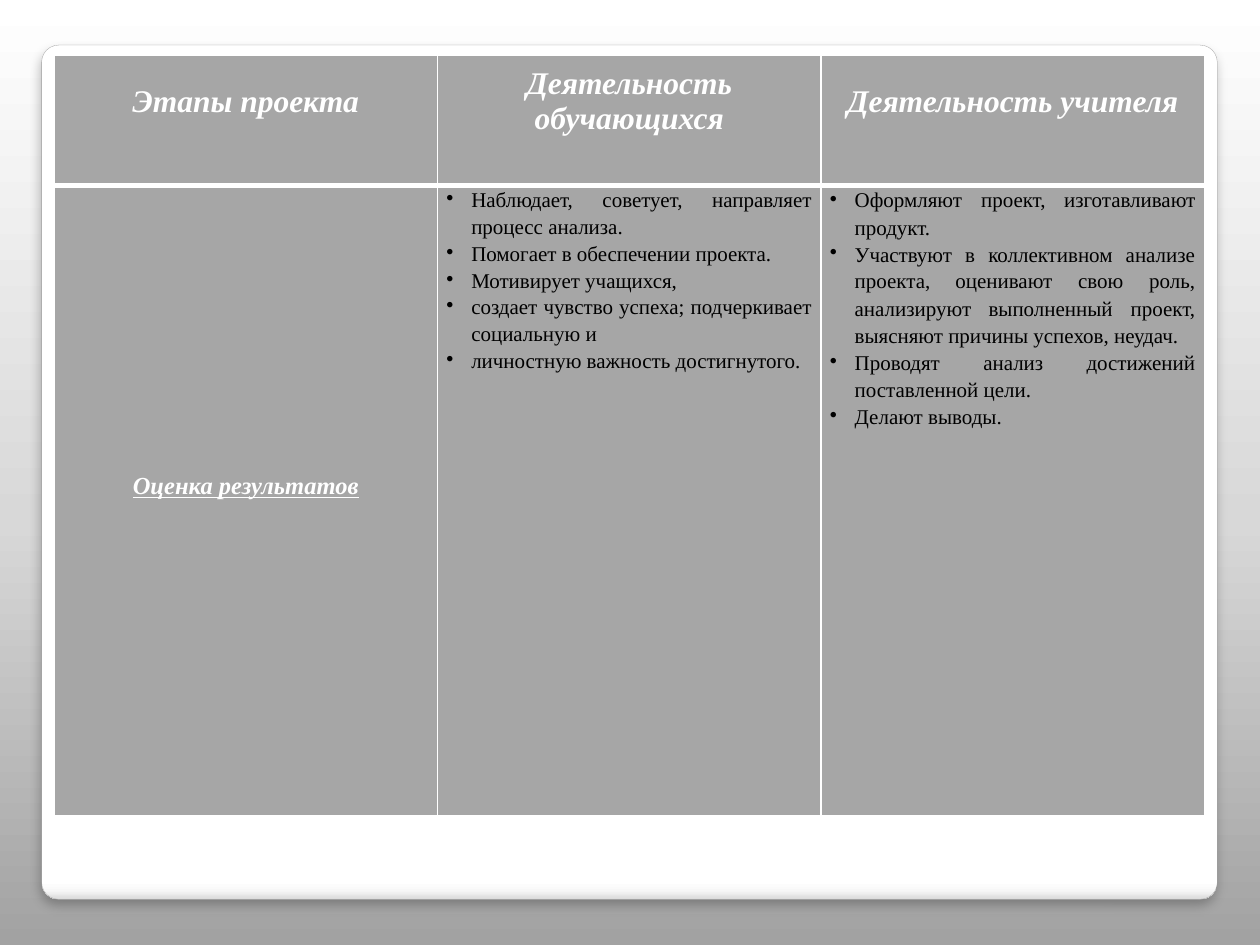
from lxml import etree
from pptx import Presentation
from pptx.dml.color import RGBColor
from pptx.enum.shapes import MSO_SHAPE
from pptx.enum.text import MSO_ANCHOR, PP_ALIGN
from pptx.oxml.ns import qn
from pptx.util import Cm, Pt

ROUNDED = MSO_SHAPE.ROUNDED_RECTANGLE
MIDDLE, TOP = MSO_ANCHOR.MIDDLE, MSO_ANCHOR.TOP
CENTER, JUSTIFY = PP_ALIGN.CENTER, PP_ALIGN.JUSTIFY

SERIF, SANS = "Times New Roman", "Calibri"
WHITE, BLACK, GREY = "FFFFFF", "000000", "A6A6A6"
GAP = " "

HEADERS = ["Этапы проекта", "Деятельность обучающихся", "Деятельность учителя"]
STAGE = "Оценка результатов"
STUDENTS = [
    ["Наблюдает, советует, направляет процесс анализа. "],
    ["Помогает в обеспечении проекта. "],
    ["Мотивирует учащихся,"],
    ["создает чувство успеха; подчеркивает социальную и"],
    ["личностную важность достигнутого."],
]
TEACHER = [
    ["Оформляют проект,", GAP, "изготавливают продукт. "],
    ["Участвуют в коллективном анализе проекта,", GAP,
     "оценивают свою роль, анализируют", GAP,
     "выполненный проект, выясняют причины успехов, неудач. "],
    ["Проводят анализ достижений поставленной цели. "],
    ["Делают выводы."],
]


def rgb(value):
    return RGBColor.from_string(value)


def add_node(parent, tag, **attrs):
    node = etree.SubElement(parent, qn(tag))
    for name, value in attrs.items():
        node.set(name, str(value))
    return node


def set_gradient(fill, root, stops, angle):
    fill.gradient()
    grad = root.find(".//" + qn("a:gradFill"))
    for child in list(grad):
        grad.remove(child)
    stop_list = add_node(grad, "a:gsLst")
    for position, color in stops:
        stop = add_node(stop_list, "a:gs", pos=position * 1000)
        add_node(stop, "a:srgbClr", val=color)
    add_node(grad, "a:lin", ang=angle * 60000, scaled=0)


def add_shadow(sp):
    sp.shadow.inherit = False
    effects = sp._element.spPr.find(qn("a:effectLst"))
    shadow = add_node(effects, "a:outerShdw", blurRad=Pt(6), dist=Pt(4),
                      dir=90 * 60000, algn="t", rotWithShape=0)
    color = add_node(shadow, "a:srgbClr", val=BLACK)
    add_node(color, "a:alpha", val=25000)


def add_panel(s):
    sp = s.shapes.add_shape(ROUNDED, Cm(0.84), Cm(0.91), Cm(23.7), Cm(17.22))
    sp.adjustments[0] = 0.02
    stops = [(0, WHITE), (98, WHITE), (99, "F7F7F7"), (100, "DADADA")]
    set_gradient(sp.fill, sp._element.spPr, stops, 90)
    sp.line.color.rgb = rgb("A4A4A4")
    sp.line.width = Pt(0.16)
    add_shadow(sp)


def format_cell(cell, anchor, margins, top, bottom):
    cell.vertical_anchor = anchor
    cell.margin_left, cell.margin_top, cell.margin_right, cell.margin_bottom = map(Cm, margins)
    tc_pr = cell._tc.get_or_add_tcPr()
    for side, width in (("L", 1), ("R", 1), ("T", top), ("B", bottom)):
        line = add_node(tc_pr, "a:ln" + side, w=Pt(width))
        add_node(add_node(line, "a:solidFill"), "a:srgbClr", val=WHITE)
    cell.fill.solid()
    cell.fill.fore_color.rgb = rgb(GREY)


def add_run(p, text, size, color, font=SERIF, strong=False, underline=False):
    r = p.add_run()
    r.text = text
    r.font.name = font
    r.font.size = Pt(size)
    r.font.color.rgb = rgb(color)
    r.font.bold = r.font.italic = strong
    r.font.underline = underline


def fill_heading(cell, text, size, underline=False):
    p = cell.text_frame.paragraphs[0]
    p.alignment = CENTER
    add_run(p, text, size, WHITE, strong=True, underline=underline)


def fill_bullets(cell, items):
    tf = cell.text_frame
    for i, runs in enumerate(items):
        p = tf.add_paragraph() if i else tf.paragraphs[0]
        p.alignment = JUSTIFY
        p.line_spacing = 1.15
        p_pr = p._p.get_or_add_pPr()
        p_pr.set("marL", str(Cm(0.5)))
        p_pr.set("indent", str(-Cm(0.5)))
        add_node(p_pr, "a:buChar", char="•")
        for text in runs:
            if text == GAP:
                add_run(p, text, 11, BLACK, SANS)
            else:
                add_run(p, text, 12, BLACK)


def add_stage_table(s):
    frame = s.shapes.add_table(2, 3, Cm(1.09), Cm(1.12), Cm(23.19), Cm(15.32))
    table = frame.table
    table.horz_banding = False
    for column in table.columns:
        column.width = Cm(7.73)
    table.rows[0].height = Cm(2.62)
    table.rows[1].height = Cm(12.7)

    for i, text in enumerate(HEADERS):
        cell = table.cell(0, i)
        format_cell(cell, MIDDLE, (0.25, 0.13, 0.25, 0.9), 1, 3)
        fill_heading(cell, text, 18)

    stage = table.cell(1, 0)
    format_cell(stage, MIDDLE, (0.18, 0.18, 0.18, 0.74), 3, 1)
    fill_heading(stage, STAGE, 14, underline=True)

    for i, items in enumerate((STUDENTS, TEACHER), start=1):
        cell = table.cell(1, i)
        format_cell(cell, TOP, (0.18, 0, 0.18, 0), 3, 1)
        fill_bullets(cell, items)


def main():
    prs = Presentation()
    prs.slide_width, prs.slide_height = Cm(25.4), Cm(19.05)
    s = prs.slides.add_slide(prs.slide_layouts[6])
    stops = [(0, "A2A2A2"), (45, "D8D8D8"), (100, WHITE)]
    set_gradient(s.background.fill, s._element, stops, 270)
    add_panel(s)
    add_stage_table(s)
    prs.save("out.pptx")


if __name__ == "__main__":
    main()
